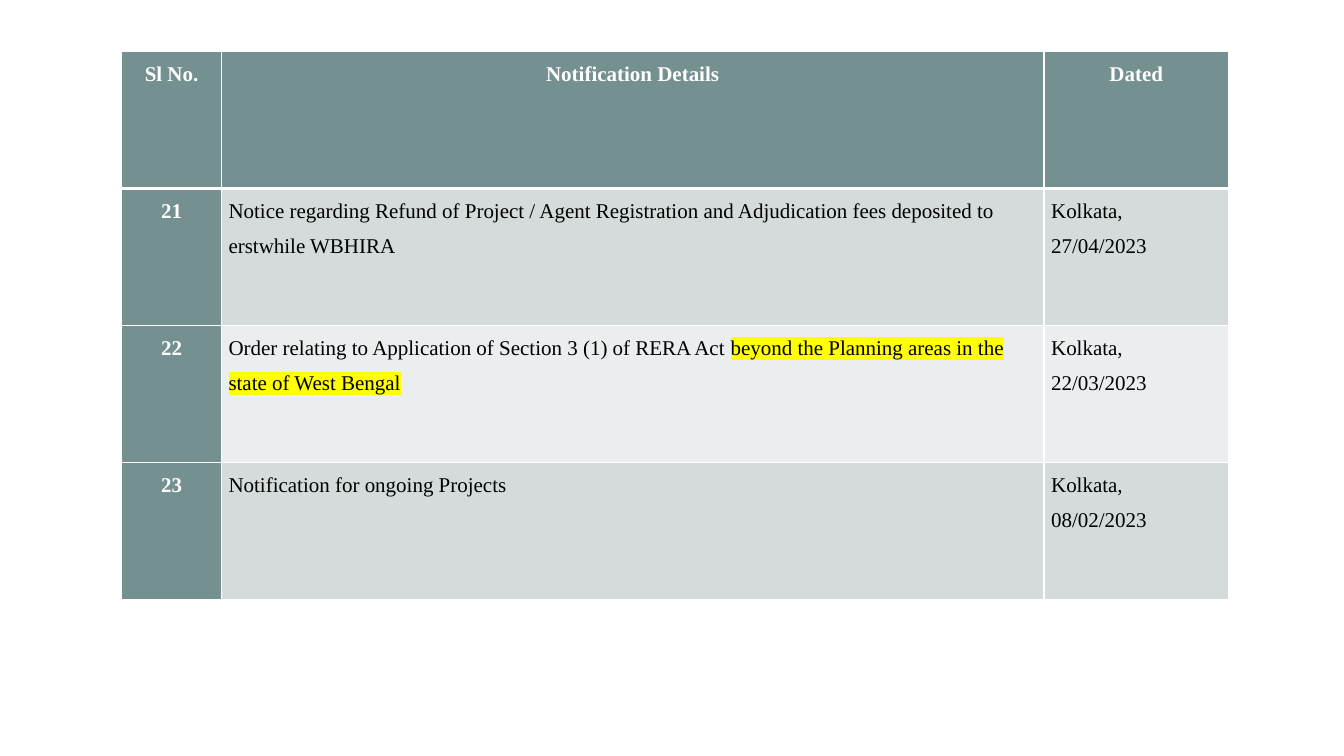
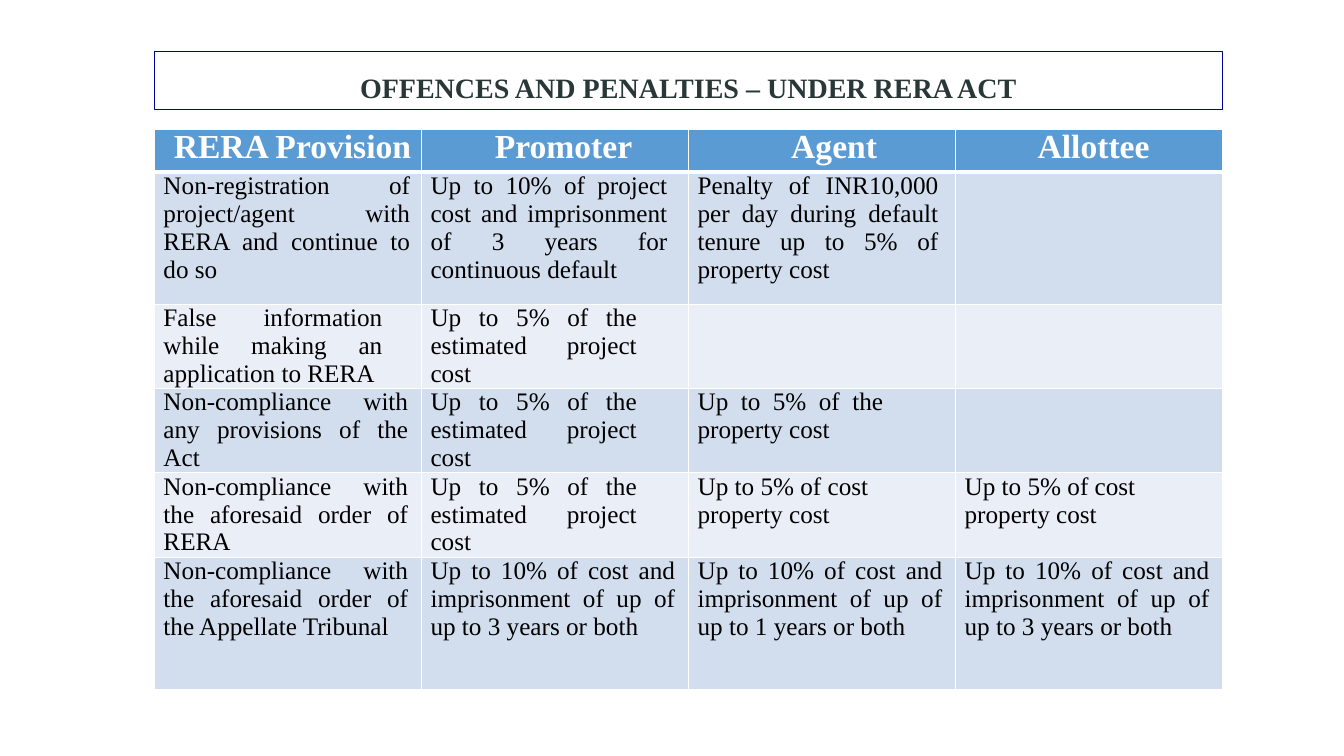
from dataclasses import dataclass

from lxml.etree import SubElement
from pptx import Presentation
from pptx.dml.color import RGBColor
from pptx.enum.shapes import MSO_SHAPE
from pptx.enum.text import MSO_ANCHOR, PP_ALIGN
from pptx.oxml.ns import qn
from pptx.util import Cm, Pt

FONT = "Times New Roman"
WHITE = RGBColor(0xFF, 0xFF, 0xFF)
BLACK = RGBColor(0x00, 0x00, 0x00)
YELLOW = RGBColor(0xFF, 0xFF, 0x00)
NAVY = RGBColor(0x00, 0x00, 0x99)
SLATE = RGBColor(0x29, 0x37, 0x37)
TEAL = RGBColor(0x74, 0x90, 0x90)
TEAL_MID = RGBColor(0xD5, 0xDB, 0xDB)
TEAL_PALE = RGBColor(0xEB, 0xEE, 0xEE)
BLUE = RGBColor(0x5B, 0x9B, 0xD4)
BLUE_MID = RGBColor(0xD2, 0xDE, 0xEE)
BLUE_PALE = RGBColor(0xEA, 0xEE, 0xF7)

TOP = 1.3


@dataclass
class Entry:
    """Cell content; indents in cm, marked text is highlighted."""
    text: str = ""
    marked: str = ""
    left: float = 0
    right: float = 0


@dataclass
class TableStyle:
    head: RGBColor
    bands: tuple
    head_size: int
    body_size: int
    body_align: PP_ALIGN
    side_margin: float = 0
    line_spacing: float = 1.0
    space_after: int = 0
    head_column: bool = False


NOTICE_STYLE = TableStyle(TEAL, (TEAL_MID, TEAL_PALE), 15, 15, PP_ALIGN.LEFT,
                          side_margin=0.18, line_spacing=1.5, space_after=8,
                          head_column=True)
PENALTY_STYLE = TableStyle(BLUE, (BLUE_MID, BLUE_PALE), 24, 18, PP_ALIGN.JUSTIFY)

NOTICES = [
    [Entry("Sl No."), Entry("Notification Details"), Entry("Dated")],
    [Entry("21"),
     Entry("Notice regarding Refund of Project / Agent Registration and "
           "Adjudication fees deposited to erstwhile WBHIRA"),
     Entry("Kolkata, 27/04/2023")],
    [Entry("22"),
     Entry("Order relating to Application of Section 3 (1) of RERA Act ",
           marked="beyond the Planning areas in the state of West Bengal"),
     Entry("Kolkata, 22/03/2023")],
    [Entry("23"), Entry("Notification for ongoing Projects"),
     Entry("Kolkata, 08/02/2023")],
]


def penalty(text, right=0.33):
    return Entry(text, left=0.23, right=right)


ESTIMATED = penalty("Up to 5% of the estimated project cost", 1.3)
PROPERTY = penalty("Up to 5% of cost\nproperty cost", 0)
THREE_YEARS = penalty("Up to 10% of cost and imprisonment of up of up to 3 years or both")
EMPTY = Entry()

PENALTIES = [
    [Entry("RERA Provision", left=0.23), Entry("Promoter", left=0.43),
     Entry("Agent", left=0.61), Entry("Allottee", left=0.23)],
    [penalty("Non-registration of project/agent with RERA and continue to do so", 0.28),
     penalty("Up to 10% of project cost and imprisonment of 3 years for "
             "continuous default", 0.53),
     penalty("Penalty of INR10,000 per day during default tenure up to 5% of "
             "property cost", 0.43),
     EMPTY],
    [penalty("False information while making an application to RERA", 0.98),
     ESTIMATED, EMPTY, EMPTY],
    [penalty("Non-compliance with any provisions of the Act"), ESTIMATED,
     penalty("Up to 5% of the property cost", 1.82), EMPTY],
    [penalty("Non-compliance with the aforesaid order of RERA"), ESTIMATED,
     PROPERTY, PROPERTY],
    [penalty("Non-compliance with the aforesaid order of the Appellate Tribunal"),
     THREE_YEARS,
     penalty("Up to 10% of cost and imprisonment of up of up to 1 years or both"),
     THREE_YEARS],
]


def set_font(para, size, color, bold):
    font = para.font
    font.name, font.size, font.bold = FONT, Pt(size), bold
    font.color.rgb = color


def add_solid_color(parent, color):
    SubElement(parent, qn("a:srgbClr")).set("val", str(color))


def highlight(span):
    properties = span._r.get_or_add_rPr()
    add_solid_color(SubElement(properties, qn("a:highlight")), YELLOW)


def set_borders(cell, row):
    """White rules, thicker between the header and the body."""
    widths = {"L": 1, "R": 1, "T": 3 if row == 1 else 1, "B": 3 if row == 0 else 1}
    for side, width in widths.items():
        line = SubElement(cell._tc.get_or_add_tcPr(), qn(f"a:ln{side}"))
        line.set("w", str(Pt(width)))
        add_solid_color(SubElement(line, qn("a:solidFill")), WHITE)


def fill_cell(cell, entry, style, row, is_head):
    set_borders(cell, row)
    cell.fill.solid()
    cell.fill.fore_color.rgb = style.head if is_head else style.bands[(row - 1) % 2]
    cell.margin_left = cell.margin_right = Cm(style.side_margin)
    cell.margin_top = cell.margin_bottom = 0
    frame = cell.text_frame
    frame.text = entry.text
    for para in frame.paragraphs:
        para.alignment = PP_ALIGN.CENTER if is_head else style.body_align
        para.line_spacing = style.line_spacing
        para.space_after = Pt(style.space_after)
        indents = para._p.get_or_add_pPr()
        indents.set("marL", str(Cm(entry.left)))
        indents.set("marR", str(Cm(entry.right)))
        set_font(para, style.head_size if is_head else style.body_size,
                 WHITE if is_head else BLACK, is_head)
    if entry.marked:
        span = frame.paragraphs[-1].add_run()
        span.text = entry.marked
        highlight(span)


def add_styled_table(page, left, top, widths, heights, entries, style):
    table = page.shapes.add_table(len(heights), len(widths), Cm(left), Cm(top),
                                  Cm(sum(widths)), Cm(sum(heights))).table
    table.horz_banding = False
    for column, width in zip(table.columns, widths):
        column.width = Cm(width)
    for row, (height, row_entries) in enumerate(zip(heights, entries)):
        table.rows[row].height = Cm(height)
        for column, entry in enumerate(row_entries):
            is_head = row == 0 or (style.head_column and column == 0)
            fill_cell(table.cell(row, column), entry, style, row, is_head)


def add_title_box(page, left, top, width, height, text):
    box = page.shapes.add_shape(MSO_SHAPE.RECTANGLE, Cm(left), Cm(top),
                                Cm(width), Cm(height))
    box.shadow.inherit = False
    box.fill.background()
    box.line.color.rgb = NAVY
    box.line.width = Pt(0.75)
    frame = box.text_frame
    frame.word_wrap = True
    frame.vertical_anchor = MSO_ANCHOR.BOTTOM
    para = frame.paragraphs[0]
    para.text = text
    para.alignment = PP_ALIGN.CENTER
    para.line_spacing = 0.9
    set_font(para, 20, SLATE, True)


def add_notice_slide(page, left, top):
    add_styled_table(page, left, top, [2.51, 20.73, 4.65], [3.45] * 4,
                     NOTICES, NOTICE_STYLE)


def add_penalty_slide(page, left, top):
    widths = [6.73] * 4
    add_title_box(page, left, top, sum(widths), 1.45,
                  "OFFENCES AND PENALTIES – UNDER RERA ACT")
    add_styled_table(page, left, top + 1.95, widths,
                     [1.09, 3.33, 2.1, 2.13, 2.13, 3.33], PENALTIES, PENALTY_STYLE)


def main():
    deck = Presentation()
    deck.slide_width, deck.slide_height = Cm(33.87), Cm(19.05)
    blank = deck.slide_layouts[6]
    add_notice_slide(deck.slides.add_slide(blank), 3.07, TOP)
    add_penalty_slide(deck.slides.add_slide(blank), 3.89, TOP)
    deck.save("out.pptx")


if __name__ == "__main__":
    main()
